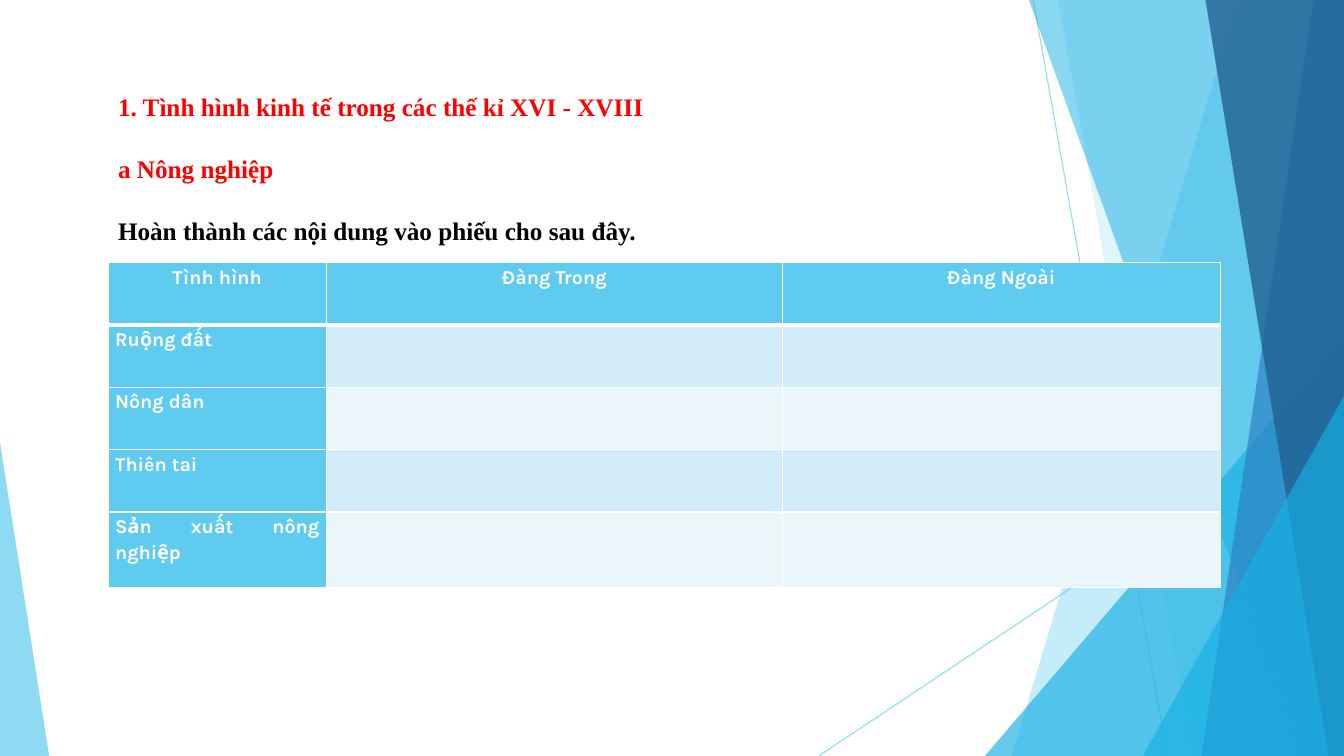
"""Builds a lesson slide with a heading, a worksheet table and a faceted blue edge."""
from lxml import etree
from pptx import Presentation
from pptx import util as u
from pptx.dml.color import RGBColor
from pptx.enum import shapes, text
from pptx.oxml.ns import qn

W, H = 33.87, 19.05
SKY, CYAN, WHITE, RED = "5FCBEF", "17B0E4", "FFFFFF", "FF0000"


def paint(fill, color, alpha=100):
    fill.solid()
    fill.fore_color.rgb = RGBColor.from_string(color)
    if alpha < 100:
        tone = fill._xPr.find(qn("a:solidFill"))[0]
        etree.SubElement(tone, qn("a:alpha"), val=str(alpha * 1000))


def write(para, words, size, font, color):
    run = para.add_run()
    run.text = words
    run.font.size = u.Pt(size)
    run.font.name = font
    run.font.bold = True
    paint(run.font.fill, color)


prs = Presentation()
prs.slide_width, prs.slide_height = u.Cm(W), u.Cm(H)
slide = prs.slides.add_slide(prs.slide_layouts[5])
tree = slide.shapes

for x1, y1, x2 in [(26.04, 0, 29.42), (W, 10.24, 20.63)]:
    line = tree.add_connector(shapes.MSO_CONNECTOR.STRAIGHT,
                              u.Cm(x1), u.Cm(y1), u.Cm(x2), u.Cm(H))
    line.line.width = u.Pt(0.75)
    paint(line.line.fill, SKY, 70)
    etree.SubElement(line._element.spPr, qn("a:effectLst"))

# Bands give top and bottom x; wedges give left, top, width and peak.
facets = [
    ("band", (31.19, 25.5), SKY, 36),
    ("band", (26.67, 30.05), SKY, 20),
    ("wedge", (24.82, 8.46, 9.05, 1), CYAN, 66),
    ("band", (25.93, 32.79), CYAN, 50),
    ("band", (33.1, 30.28), "2E83C3", 70),
    ("band", (30.38, 33.48), "226292", 80),
    ("wedge", (28.8, 9.98, 5.07, 1), CYAN, 66),
    ("wedge", (0, 11.15, 1.24, 0), SKY, 70),
]
for kind, dims, color, alpha in facets:
    if kind == "band":
        top, low = dims
        pen = tree.build_freeform(u.Cm(top), 0)
        pen.add_line_segments([(u.Cm(x), u.Cm(y)) for x, y in
                               [(W, 0), (W, H), (low, H)]])
        facet = pen.convert_to_shape()
    else:
        x, y, wide, peak = dims
        facet = tree.add_shape(shapes.MSO_SHAPE.ISOSCELES_TRIANGLE,
                               u.Cm(x), u.Cm(y), u.Cm(wide), u.Cm(H - y))
        facet.adjustments[0] = peak
    facet.shadow.inherit = False
    facet.line.fill.background()
    paint(facet.fill, color, alpha)

labels = ["Ruộng đất", "Nông dân", "Thiên tai", "Sản xuất nông nghiệp"]
rows = [["Tình hình", "Đàng Trong", "Đàng Ngoài"]] + [[name, "", ""] for name in labels]
wides = [5.51, 11.48, 11.05]
highs = [1.57] * 4 + [1.9]
table = tree.add_table(len(rows), len(wides), u.Cm(2.72), u.Cm(6.62),
                       u.Cm(sum(wides)), u.Cm(sum(highs))).table
for col, wide in zip(table.columns, wides):
    col.width = u.Cm(wide)
for row, high in zip(table.rows, highs):
    row.height = u.Cm(high)

for r, row in enumerate(rows):
    for c, words in enumerate(row):
        cell = table.cell(r, c)
        cell.margin_left = cell.margin_right = u.Cm(0.18)
        cell.margin_top = cell.margin_bottom = 0
        props = cell._tc.get_or_add_tcPr()
        for side in "LRTB":
            thick = (r, side) in [(0, "B"), (1, "T")]
            edge = etree.SubElement(props, qn("a:ln" + side),
                                    w=str(u.Pt(3 if thick else 1)))
            ink = etree.SubElement(edge, qn("a:solidFill"))
            etree.SubElement(ink, qn("a:srgbClr"), val=WHITE)
        head = r == 0 or c == 0
        paint(cell.fill, SKY if head else "D2ECF9" if r % 2 else "EAF6FC")
        if words:
            para = cell.text_frame.paragraphs[0]
            para.alignment = text.PP_ALIGN.JUSTIFY if r else text.PP_ALIGN.CENTER
            para.line_spacing = 1.15
            para.space_after = u.Pt(10)
            write(para, words, 14, "Karla", WHITE)

title = tree.title
title.left, title.top = u.Cm(2.72), u.Cm(2.18)
title.width, title.height = u.Cm(13.9), u.Cm(4.11)
frame = title.text_frame
frame.word_wrap = True
frame.auto_size = text.MSO_AUTO_SIZE.NONE
frame.vertical_anchor = text.MSO_ANCHOR.TOP
lines = [
    ("1. Tình hình kinh tế trong các thế kỉ XVI - XVIII", RED),
    ("a Nông nghiệp", RED),
    ("Hoàn thành các nội dung vào phiếu cho sau đây.", "000000"),
]
for i, (words, color) in enumerate(lines):
    para = frame.add_paragraph() if i else frame.paragraphs[0]
    para.alignment = text.PP_ALIGN.LEFT
    para.space_before = u.Pt(22.5 if i else 0)
    write(para, words, 18, "Times New Roman", color)

prs.save("out.pptx")
